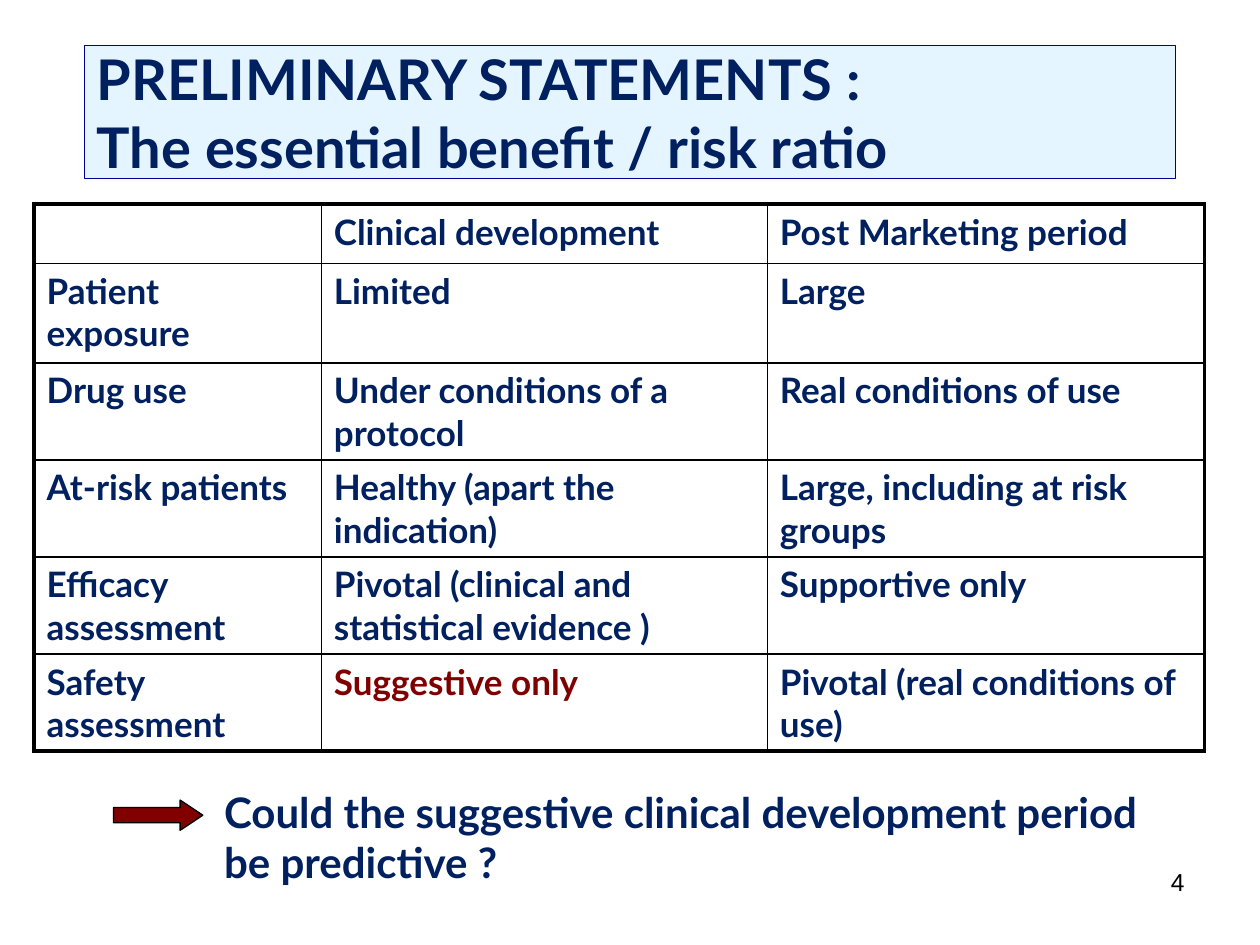
"""Build the slide comparing benefit and risk before and after marketing."""
from lxml import etree
from pptx import Presentation
from pptx.dml.color import RGBColor
from pptx.enum.shapes import MSO_SHAPE
from pptx.enum.text import MSO_ANCHOR, PP_ALIGN
from pptx.oxml.ns import qn
from pptx.util import Inches, Pt

RECTANGLE, RIGHT_ARROW = MSO_SHAPE.RECTANGLE, MSO_SHAPE.RIGHT_ARROW
MIDDLE, LEFT, RIGHT = MSO_ANCHOR.MIDDLE, PP_ALIGN.LEFT, PP_ALIGN.RIGHT

COLORS = {
    "navy": "002060",
    "title_fill": "CCECFF",
    "title_line": "000099",
    "accent": "800000",
    "black": "000000",
}
COLUMN_WIDTHS = [2.28, 3.54, 3.47]
ROW_HEIGHTS = [0.47, 0.79, 0.77, 0.77, 0.77, 0.77]
COMPARISON = [
    ["", "Clinical development", "Post Marketing period"],
    ["Patient exposure", "Limited", "Large"],
    ["Drug use", "Under conditions of a protocol", "Real conditions of use"],
    ["At-risk patients", "Healthy (apart the indication)", "Large, including at risk groups"],
    ["Efficacy assessment", "Pivotal (clinical and statistical evidence )", "Supportive only"],
    ["Safety assessment", "Suggestive only", "Pivotal (real conditions of use)"],
]
HIGHLIGHT = "Suggestive only"
OUTER_LINE, INNER_LINE = 2.25, 1


def rgb(name):
    return RGBColor.from_string(COLORS[name])


def style_text(paragraph, size, color="navy", font="Lato", bold=True):
    for run in paragraph.runs:
        run.font.name = font
        run.font.size = Pt(size)
        run.font.bold = bold
        run.font.color.rgb = rgb(color)


def add_block(slide, preset, box, fill, line):
    block = slide.shapes.add_shape(preset, *map(Inches, box))
    block.shadow.inherit = False
    block.fill.solid()
    block.fill.fore_color.rgb = rgb(fill)
    block.line.color.rgb = rgb(line)
    block.line.width = Pt(0.75)
    return block


def add_title(slide, text):
    banner = add_block(slide, RECTANGLE, (0.67, 0.36, 8.66, 1.06), "title_fill", "title_line")
    fill_color = banner.fill._xPr.find(qn("a:solidFill"))[0]
    etree.SubElement(fill_color, qn("a:alpha"), val="50000")
    frame = banner.text_frame
    frame.word_wrap = True
    frame.vertical_anchor = MIDDLE
    frame.text = text
    frame.paragraphs[0].alignment = LEFT
    style_text(frame.paragraphs[0], 32)


def set_borders(cell, widths):
    properties = cell._tc.get_or_add_tcPr()
    for position, (side, width) in enumerate(widths.items()):
        border = etree.Element(qn(f"a:ln{side}"), w=str(Pt(width)))
        fill = etree.SubElement(border, qn("a:solidFill"))
        etree.SubElement(fill, qn("a:srgbClr"), val=COLORS["black"])
        properties.insert(position, border)


def add_comparison(slide):
    last_row, last_column = len(ROW_HEIGHTS) - 1, len(COLUMN_WIDTHS) - 1
    table = slide.shapes.add_table(
        len(ROW_HEIGHTS), len(COLUMN_WIDTHS), Inches(0.27), Inches(1.62),
        Inches(sum(COLUMN_WIDTHS)), Inches(sum(ROW_HEIGHTS)),
    ).table
    table.first_row = table.horz_banding = False
    for column, width in zip(table.columns, COLUMN_WIDTHS):
        column.width = Inches(width)
    for r, (height, statements) in enumerate(zip(ROW_HEIGHTS, COMPARISON)):
        table.rows[r].height = Inches(height)
        for c, statement in enumerate(statements):
            cell = table.cell(r, c)
            cell.fill.background()
            outer = {"L": c == 0, "R": c == last_column, "T": r == 0, "B": r == last_row}
            set_borders(cell, {side: OUTER_LINE if edge else INNER_LINE
                               for side, edge in outer.items()})
            if statement:
                cell.text_frame.text = statement
                color = "accent" if statement == HIGHLIGHT else "navy"
                style_text(cell.text_frame.paragraphs[0], 20, color)


def add_text(slide, box, text):
    frame = slide.shapes.add_textbox(*map(Inches, box)).text_frame
    frame.word_wrap = True
    frame.text = text
    return frame.paragraphs[0]


def add_question(slide, text):
    question = add_text(slide, (1.3, 6.19, 8.19, 1.02), f"\t{text}")
    properties = question._p.get_or_add_pPr()
    properties.set("marL", str(Inches(0.38)))
    properties.set("indent", str(Inches(-0.38)))
    style_text(question, 24)


def add_pointer(slide):
    pointer = add_block(slide, RIGHT_ARROW, (0.9, 6.35, 0.71, 0.24), "accent", "black")
    pointer.adjustments[0] = 0.5
    pointer.adjustments[1] = 0.75


def add_page_number(slide, number):
    page_number = add_text(slide, (7.17, 6.83, 2.33, 0.52), number)
    page_number.alignment = RIGHT
    style_text(page_number, 14, "black", "Arial", bold=False)


def main():
    presentation = Presentation()
    presentation.slide_width, presentation.slide_height = Inches(10), Inches(7.5)
    slide = presentation.slides.add_slide(presentation.slide_layouts[6])
    add_title(slide, "PRELIMINARY STATEMENTS :\vThe essential benefit / risk ratio")
    add_comparison(slide)
    add_question(slide, "Could the suggestive clinical development period be predictive ?")
    add_pointer(slide)
    add_page_number(slide, "4")
    presentation.save("out.pptx")


if __name__ == "__main__":
    main()
